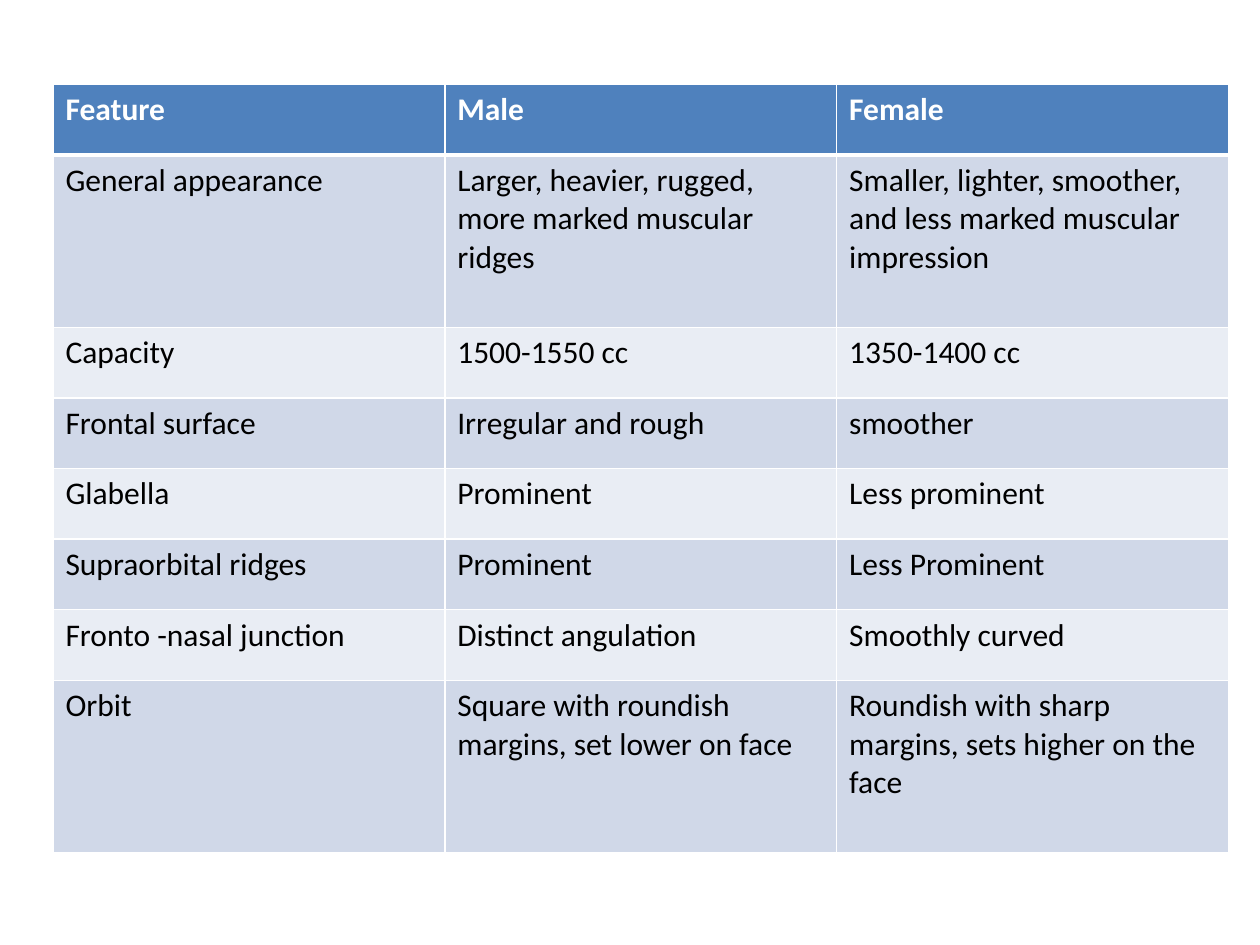
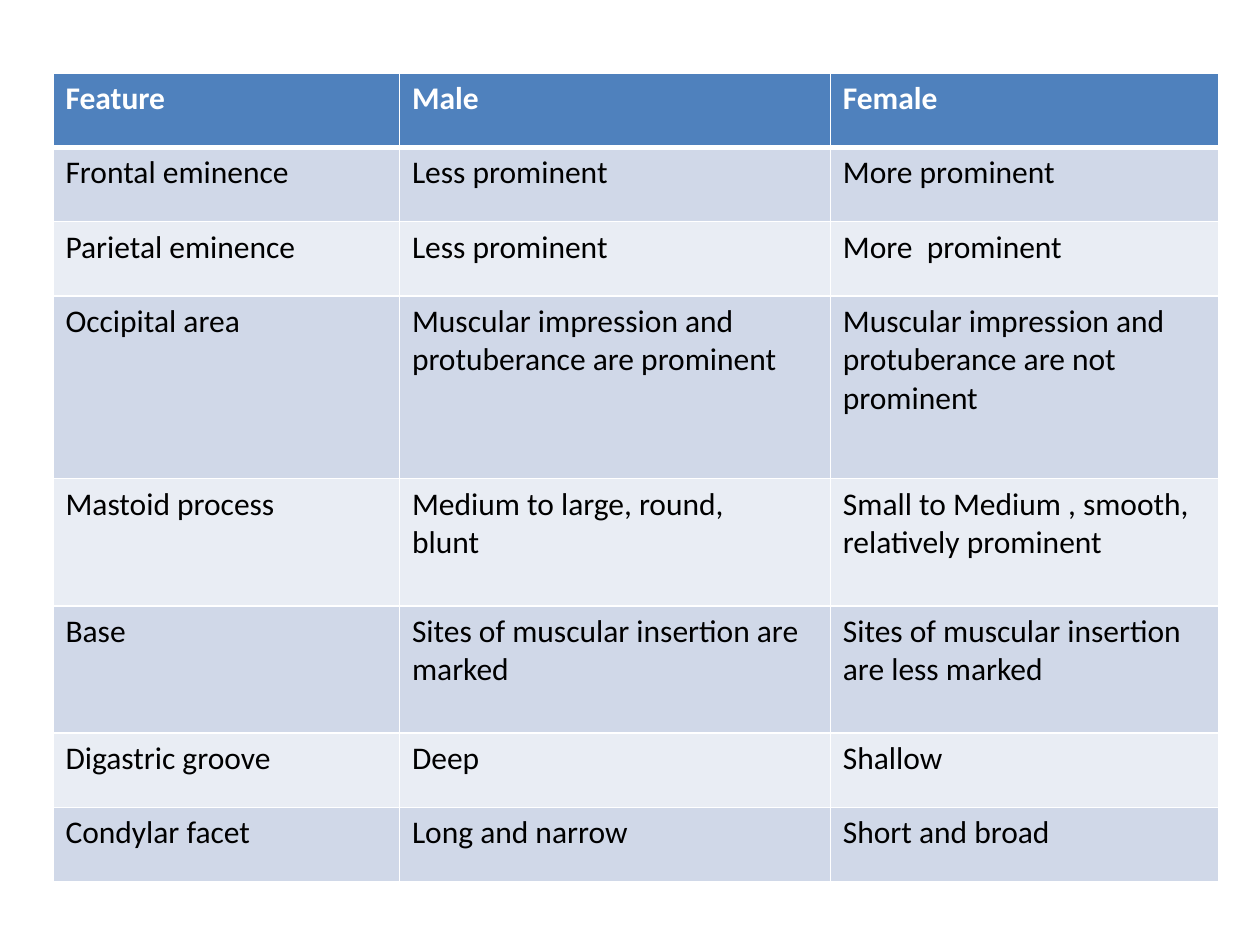
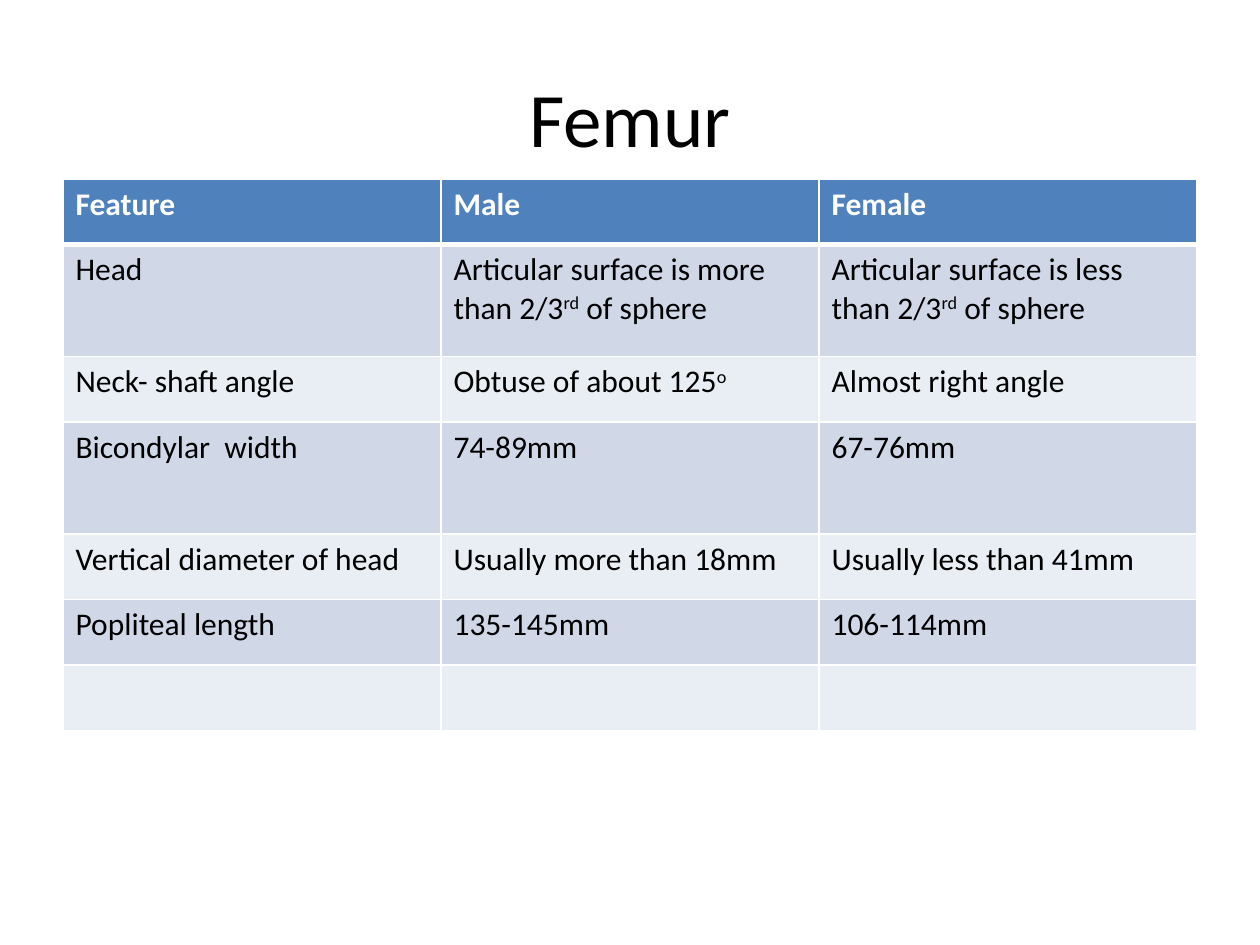
import dataclasses

import pptx
import pptx.dml.color
import pptx.enum.text
import pptx.oxml
import pptx.oxml.ns
import pptx.util

Inches = pptx.util.Inches
Pt = pptx.util.Pt


@dataclasses.dataclass(frozen=True)
class Theme:
    font: str = "Calibri"
    title_size: int = 44
    table_size: int = 18
    ink: str = "000000"
    header_ink: str = "FFFFFF"
    header_fill: str = "4F81BD"
    band_fills: tuple = ("D0D8E8", "E9EDF4")
    border: str = "FFFFFF"
    border_width: int = 1
    header_rule_width: int = 3


THEME = Theme()
HEADER = ("Feature", "Male", "Female")

SKULL_ROWS = (
    ("General appearance",
     "Larger, heavier, rugged, more marked muscular ridges",
     "Smaller, lighter, smoother, and less marked muscular impression"),
    ("Capacity", "1500-1550 cc", "1350-1400 cc"),
    ("Frontal surface", "Irregular and rough", "smoother"),
    ("Glabella", "Prominent", "Less prominent"),
    ("Supraorbital ridges", "Prominent", "Less Prominent"),
    ("Fronto -nasal junction", "Distinct angulation", "Smoothly curved"),
    ("Orbit",
     "Square with roundish margins, set lower on face",
     "Roundish with sharp margins, sets higher on the face"),
)

SKULL_MORE_ROWS = (
    ("Frontal eminence", "Less prominent", "More prominent"),
    ("Parietal eminence", "Less prominent", "More  prominent"),
    ("Occipital area",
     "Muscular impression and protuberance are prominent",
     "Muscular impression and protuberance are not prominent"),
    ("Mastoid process",
     "Medium to large, round,\nblunt",
     "Small to Medium , smooth, relatively prominent"),
    ("Base",
     "Sites of muscular insertion are marked",
     "Sites of muscular insertion are less marked"),
    ("Digastric groove", "Deep", "Shallow"),
    ("Condylar facet", "Long and narrow", "Short and broad"),
)

FEMUR_ROWS = (
    ("Head",
     "Articular surface is more than 2/3^rd^ of sphere",
     "Articular surface is less than 2/3^rd^ of sphere"),
    ("Neck- shaft angle", "Obtuse of about 125^o^", "Almost right angle"),
    ("Bicondylar  width", "74-89mm", "67-76mm"),
    ("Vertical diameter of head", "Usually more than 18mm", "Usually less than 41mm"),
    ("Popliteal length", "135-145mm", "106-114mm"),
    ("", "", ""),
)


def rgb(value):
    return pptx.dml.color.RGBColor.from_string(value)


def format_font(font, size, color, bold=False):
    values = {"name": THEME.font, "size": Pt(size), "bold": bold}
    for name, value in values.items():
        setattr(font, name, value)
    font.color.rgb = rgb(color)


def write_text(frame, text, size, color, bold=False):
    """Fill a text frame; parts between ^ marks are superscript."""
    for index, line in enumerate(text.split("\n")):
        para = frame.add_paragraph() if index else frame.paragraphs[0]
        format_font(para.font, size, color, bold)
        for position, part in enumerate(line.split("^")):
            if not part:
                continue
            span = para.add_run()
            span.text = part
            format_font(span.font, size, color, bold)
            if position % 2:
                span._r.get_or_add_rPr().set("baseline", "30000")


def add_borders(cell, widths):
    """Draw the cell's edges; widths maps L, R, T and B to points."""
    properties = cell._tc.get_or_add_tcPr()
    for side, width in widths.items():
        properties.append(pptx.oxml.parse_xml(
            f'<a:ln{side} {pptx.oxml.ns.nsdecls("a")} w="{Pt(width)}">'
            f'<a:solidFill><a:srgbClr val="{THEME.border}"/></a:solidFill>'
            f'</a:ln{side}>'))


def style_cell(cell, text, row):
    is_header = row == 0
    thin, thick = THEME.border_width, THEME.header_rule_width
    add_borders(cell, {
        "L": thin,
        "R": thin,
        "T": thick if row == 1 else thin,
        "B": thick if is_header else thin,
    })
    band = THEME.band_fills[(row - 1) % len(THEME.band_fills)]
    cell.fill.solid()
    cell.fill.fore_color.rgb = rgb(THEME.header_fill if is_header else band)
    color = THEME.header_ink if is_header else THEME.ink
    write_text(cell.text_frame, text, THEME.table_size, color, is_header)


def add_comparison(page, left, top, widths, heights, body):
    rows = (HEADER, *body)
    table = page.shapes.add_table(
        len(rows), len(HEADER), Inches(left), Inches(top),
        Inches(sum(widths)), Inches(sum(heights))).table
    for column, width in zip(table.columns, widths):
        column.width = Inches(width)
    for index, (texts, height) in enumerate(zip(rows, heights)):
        table.rows[index].height = Inches(height)
        for column, text in enumerate(texts):
            style_cell(table.cell(index, column), text, index)


def add_title(page, text):
    box = page.shapes.add_textbox(Inches(0.5), Inches(0.3), Inches(9), Inches(1.25))
    frame = box.text_frame
    frame.word_wrap = True
    frame.vertical_anchor = pptx.enum.text.MSO_ANCHOR.MIDDLE
    write_text(frame, text, THEME.title_size, THEME.ink)
    frame.paragraphs[0].alignment = pptx.enum.text.PP_ALIGN.CENTER


def main():
    deck = pptx.Presentation()
    deck.slide_width, deck.slide_height = Inches(10), Inches(7.5)
    blank = deck.slide_layouts[6]

    page = deck.slides.add_slide(blank)
    add_comparison(page, 0.42, 0.67, [3.11] * 3,
                   [0.56, 1.37] + [0.56] * 5 + [1.37], SKULL_ROWS)

    page = deck.slides.add_slide(blank)
    add_comparison(page, 0.42, 0.58, [2.75, 3.42, 3.08],
                   [0.59] * 3 + [1.45] + [1.01] * 2 + [0.59] * 2, SKULL_MORE_ROWS)

    page = deck.slides.add_slide(blank)
    add_title(page, "Femur")
    add_comparison(page, 0.5, 1.42, [3] * 3,
                   [0.52, 0.89] * 2 + [0.52] * 3, FEMUR_ROWS)

    deck.save("out.pptx")


if __name__ == "__main__":
    main()
